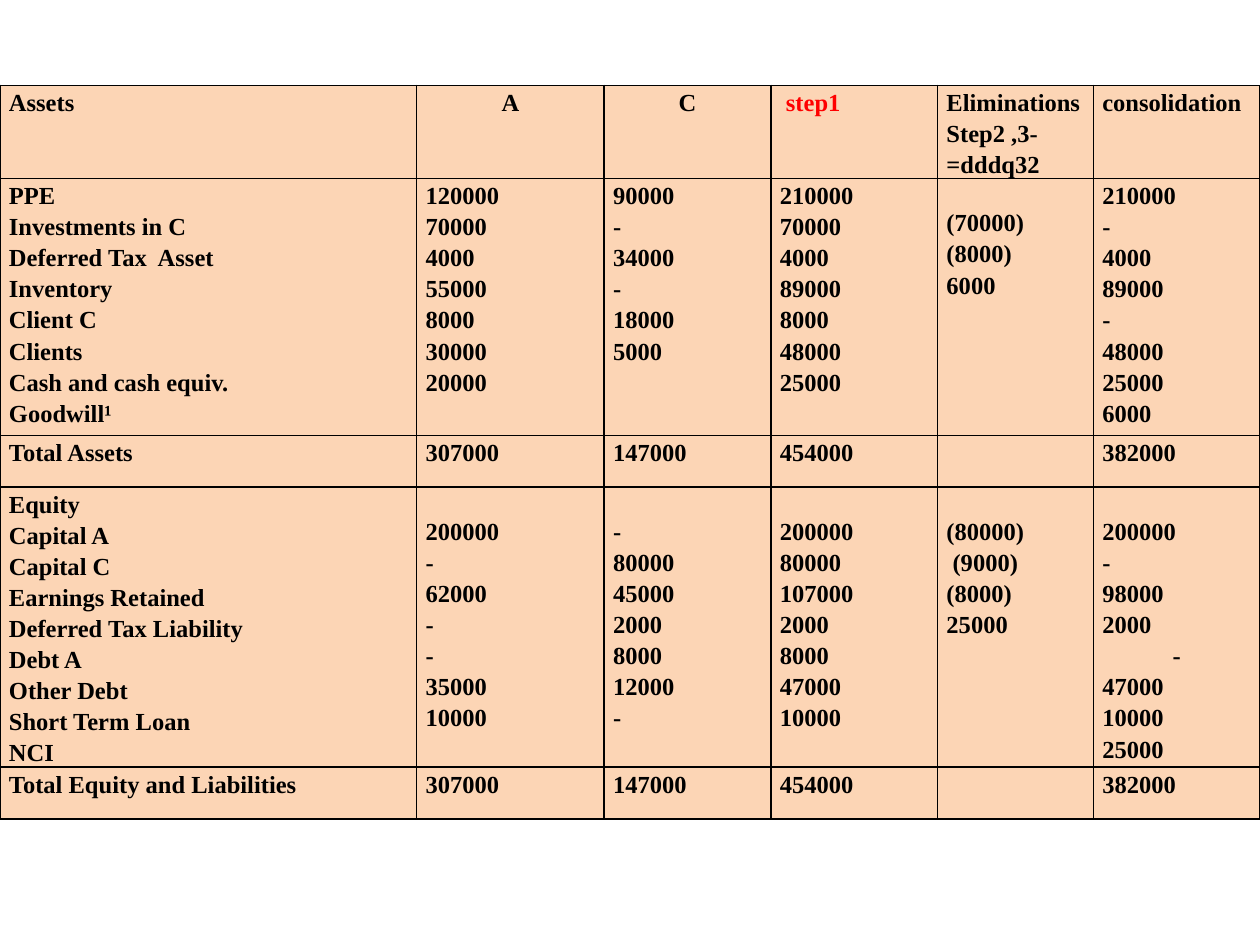
import pptx
import pptx.dml.color
import pptx.enum.text
import pptx.oxml
import pptx.oxml.ns
import pptx.util
from pptx.util import Cm

COLORS = {"cell": "FCD5B5", "ink": "000000", "step": "FF0000"}
FONT = "Times New Roman"
COLUMN_WIDTHS = [8.4, 3.78, 3.36, 3.36, 3.14, 3.36]
LINE_DROP = 0.55

BALANCE_SHEET = [
    (1.88, ["Assets", "A", "C", " step1", "Eliminations|Step2 ,3-=dddq32", "consolidation"]),
    (5.18, [
        "PPE|Investments in C|Deferred Tax  Asset|Inventory|Client C|Clients|Cash and cash equiv.|Goodwill¹",
        "120000|70000|4000|55000|8000|30000|20000",
        "90000|-|34000|-|18000|5000",
        "210000|70000|4000|89000|8000|48000|25000",
        "(70000)|(8000)|6000",
        "210000|-|4000|89000|-|48000|25000|6000",
    ]),
    (1.04, ["Total Assets", "307000", "147000", "454000", "", "382000"]),
    (5.64, [
        "Equity|Capital A|Capital C|Earnings Retained|Deferred Tax Liability|Debt A"
        "|Other Debt|Short Term Loan|NCI",
        "200000|-|62000|-|-|35000|10000",
        "-|80000|45000|2000|8000|12000|-",
        "200000|80000|107000|2000|8000|47000|10000",
        "(80000)| (9000)|(8000)|25000",
        "200000|-|98000|2000|-|47000|10000|25000",
    ]),
    (1.04, ["Total Equity and Liabilities", "307000", "147000", "454000", "", "382000"]),
]
DROPPED_CELLS = {(1, 4)} | {(3, column) for column in range(1, 6)}
CENTERED_LINES = {(0, 1): {0}, (0, 2): {0}, (3, 5): {4}}
CELL_COLORS = {(0, 3): "step"}


def rgb(name):
    """Return the named colour."""
    return pptx.dml.color.RGBColor.from_string(COLORS[name])


def write_text(frame, text, *, color="ink", size=14, bold=True, centered=()):
    """Write the parts of text as paragraphs, centring those whose index is given."""
    for index, line in enumerate(text.split("|")):
        paragraph = frame.add_paragraph() if index else frame.paragraphs[0]
        paragraph.line_spacing = 1.15
        if index in centered:
            paragraph.alignment = pptx.enum.text.PP_ALIGN.CENTER
        if not line:
            continue
        run = paragraph.add_run()
        run.text = line
        run.font.name = FONT
        run.font.size = pptx.util.Pt(size)
        run.font.bold = bold
        run.font.color.rgb = rgb(color)


def style_cell(cell, dropped):
    """Give a cell its borders, fill and margins."""
    properties = cell._tc.get_or_add_tcPr()
    for side in "LRTB":
        properties.append(pptx.oxml.parse_xml(
            f'<a:ln{side} {pptx.oxml.ns.nsdecls("a")} w="12700"><a:solidFill>'
            f'<a:srgbClr val="{COLORS["ink"]}"/></a:solidFill></a:ln{side}>'))
    cell.fill.solid()
    cell.fill.fore_color.rgb = rgb("cell")
    cell.margin_left = cell.margin_right = Cm(0.18)
    cell.margin_top = Cm(LINE_DROP if dropped else 0)
    cell.margin_bottom = 0


def add_balance_sheet(slide, left, top, width, height):
    """Place the consolidation table in the given box."""
    sheet = slide.shapes.add_table(
        len(BALANCE_SHEET), len(COLUMN_WIDTHS), left, top, width, height).table
    sheet.first_row = sheet.horz_banding = False
    for column, share in zip(sheet.columns, COLUMN_WIDTHS):
        column.width = int(width * share / sum(COLUMN_WIDTHS))
    total_height = sum(row_height for row_height, _ in BALANCE_SHEET)
    for row, (row_height, entries) in enumerate(BALANCE_SHEET):
        sheet.rows[row].height = int(height * row_height / total_height)
        for column, entry in enumerate(entries):
            position = (row, column)
            cell = sheet.cell(row, column)
            style_cell(cell, position in DROPPED_CELLS)
            write_text(cell.text_frame, entry,
                       color=CELL_COLORS.get(position, "ink"),
                       centered=CENTERED_LINES.get(position, ()))


def main():
    """Build and save the slide."""
    presentation = pptx.Presentation()
    presentation.slide_width = Cm(25.4)
    presentation.slide_height = Cm(19.05)
    slide = presentation.slides.add_slide(presentation.slide_layouts[6])
    add_balance_sheet(slide, 0, Cm(1.72), presentation.slide_width, Cm(14.78))
    presentation.save("out.pptx")


if __name__ == "__main__":
    main()
